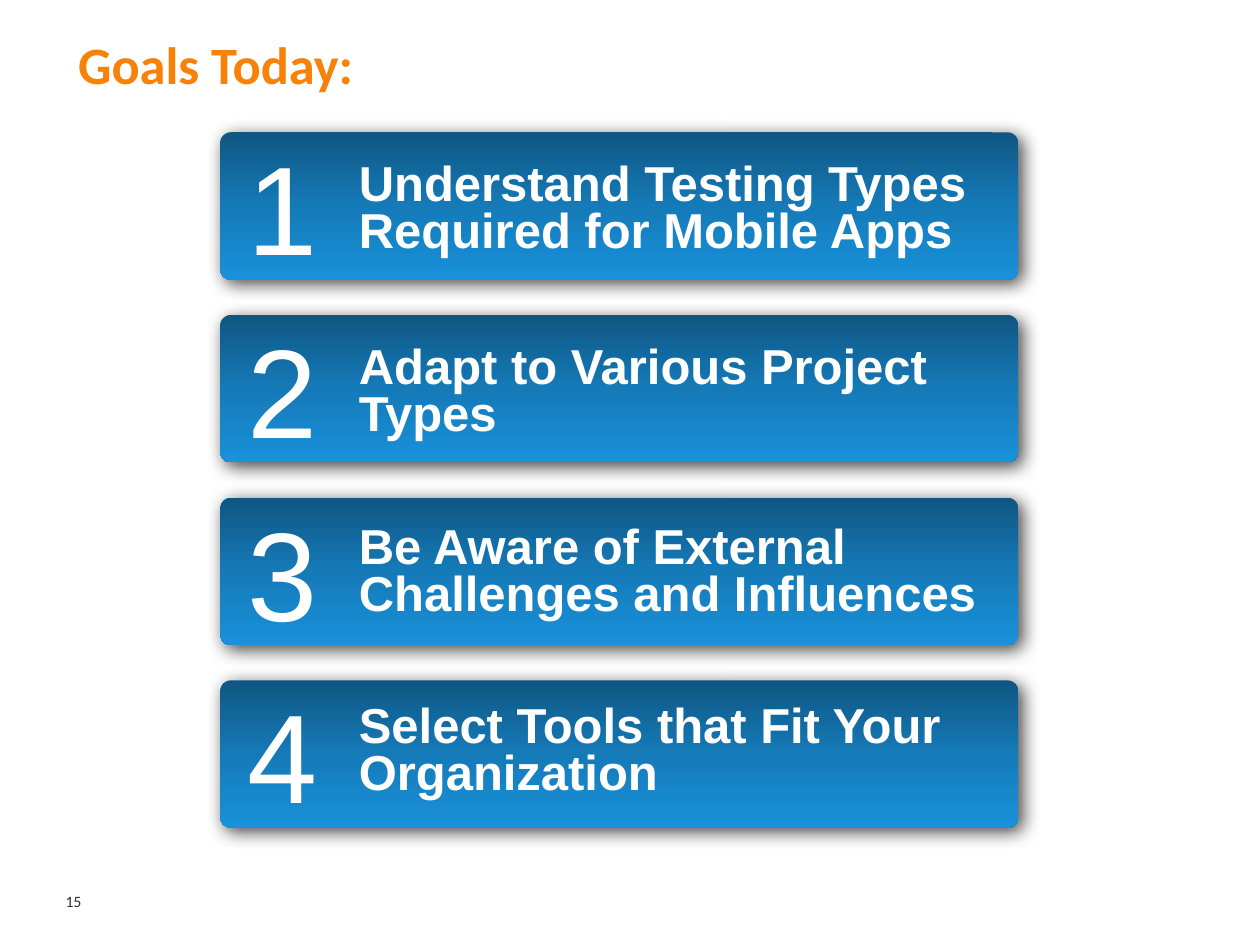
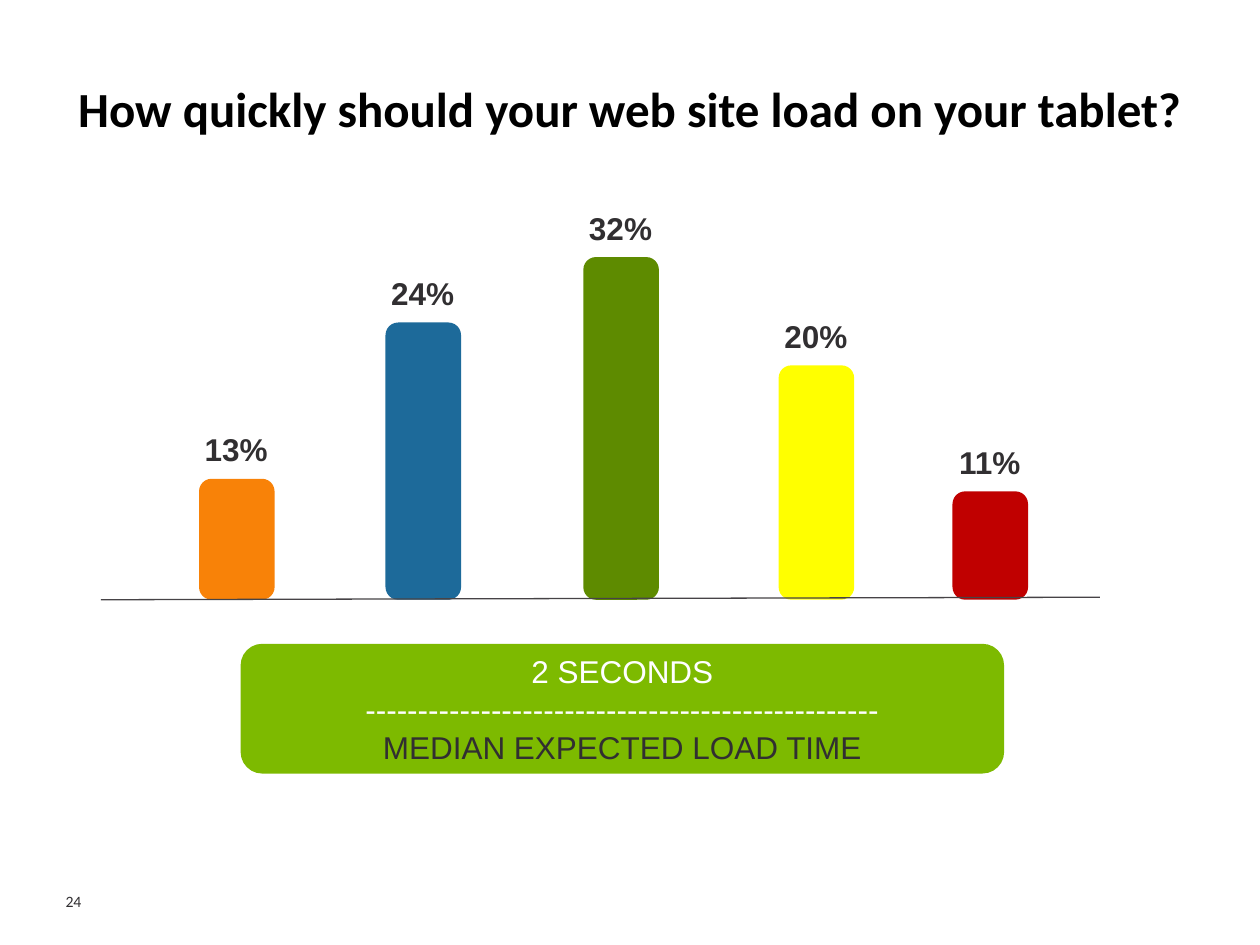
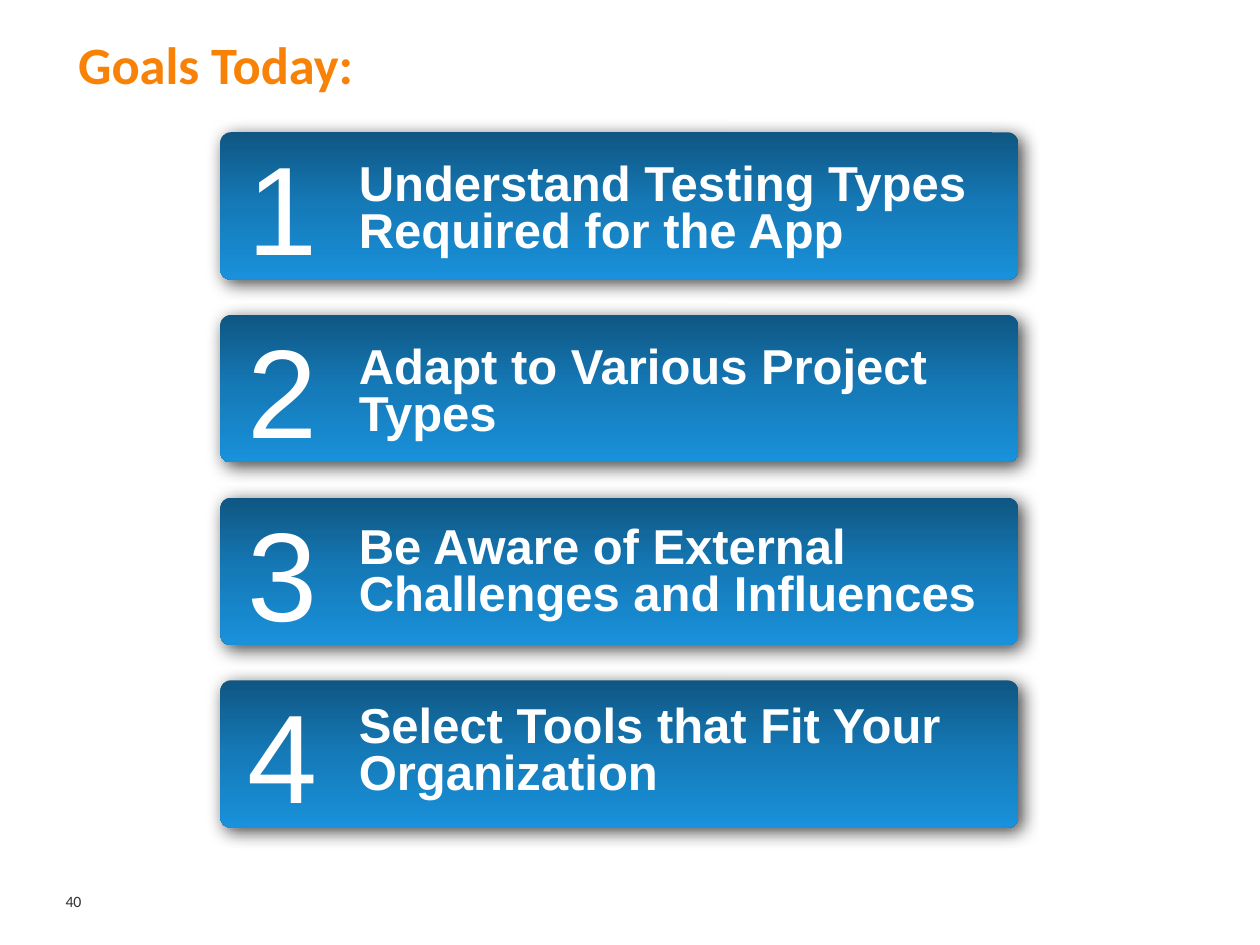
from lxml import etree
from pptx import Presentation
from pptx import util as u
from pptx.dml import color
from pptx.enum import shapes, text
from pptx.oxml import ns

ORANGE = "F88208"
WHITE = "FFFFFF"
BLACK = "000000"
DARK = "312F31"
GREEN = "7DBA00"
AXIS = "464346"
CARD_GRADIENT = [(0, "0F5682"), (50, "157AB8"), (100, "1991DB")]

TITLE_BOX = (0.52, 0.32, 9.02, 0.85)
NUMBER_BOX = (0.52, 6.95, 0.85, 0.4)
CARDS_BOX = (1.75, 1.05, 6.33, 1.17)
CARD_PITCH = 1.45
CHART_BOX = (0.8, 1.58, 7.93, 3.18)
CALLOUT_BOX = (1.91, 5.11, 6.06, 1.03)

SHARED_GOALS = [
    ("Adapt to Various Project Types", 0.2),
    ("Be Aware of External Challenges and Influences", 0.18),
    ("Select Tools that Fit Your Organization", 0.15),
]
BARS = [
    ("13%", ORANGE, 0.78, 0.96),
    ("24%", "1D6A9A", 2.26, 2.2),
    ("32%", "5E8B00", 3.83, 2.72),
    ("20%", "FFFF00", 5.38, 1.86),
    ("11%", "C00000", 6.76, 0.86),
]


def rgb(value):
    return color.RGBColor.from_string(value)


def lengths(box):
    return [u.Inches(value) for value in box]


def set_insets(frame, left, top, right, bottom):
    frame.margin_left, frame.margin_top, frame.margin_right, frame.margin_bottom = lengths(
        (left, top, right, bottom))


def add_run(paragraph, content, size, colour, font="Arial", bold=False):
    run = paragraph.add_run()
    run.text = content
    run.font.size = u.Pt(size)
    run.font.name = font
    run.font.bold = bold
    run.font.color.rgb = rgb(colour)


def add_block(slide, box, colour, kind=shapes.MSO_SHAPE.ROUNDED_RECTANGLE):
    shape = slide.shapes.add_shape(kind, *lengths(box))
    shape.fill.solid()
    shape.fill.fore_color.rgb = rgb(colour)
    shape.line.fill.background()
    shape.shadow.inherit = False
    return shape


def add_centred_lines(shape, lines, size, bold=False):
    frame = shape.text_frame
    frame.word_wrap = False
    frame.vertical_anchor = text.MSO_ANCHOR.MIDDLE
    for index, (content, colour) in enumerate(lines):
        paragraph = frame.add_paragraph() if index else frame.paragraphs[0]
        paragraph.alignment = text.PP_ALIGN.CENTER
        add_run(paragraph, content, size, colour, bold=bold)


def add_titled_slide(presentation, title, number, size, colour, top_inset=0.05):
    slide = presentation.slides.add_slide(presentation.slide_layouts[5])
    shape = slide.shapes.title
    shape.left, shape.top, shape.width, shape.height = lengths(TITLE_BOX)
    frame = shape.text_frame
    frame.auto_size = text.MSO_AUTO_SIZE.NONE
    frame.word_wrap = True
    frame.vertical_anchor = text.MSO_ANCHOR.TOP
    set_insets(frame, 0.1, top_inset, 0.1, 0)
    paragraph = frame.paragraphs[0]
    paragraph.alignment = text.PP_ALIGN.LEFT
    paragraph.line_spacing = 0.75
    add_run(paragraph, title, size, colour, "Calibri", True)

    frame = slide.shapes.add_textbox(*lengths(NUMBER_BOX)).text_frame
    frame.word_wrap = True
    frame.vertical_anchor = text.MSO_ANCHOR.MIDDLE
    set_insets(frame, 0, 0.05, 0, 0.05)
    add_run(frame.paragraphs[0], number, 9, DARK, "Calibri")
    return slide


def add_colour_element(parent, colour):
    return etree.SubElement(parent, ns.qn("a:srgbClr"), val=colour)


def style_card(shape):
    shape.adjustments[0] = 0.071
    shape.fill.gradient()
    shape.fill.gradient_angle = 270
    properties = shape._element.spPr
    stops = properties.find(".//" + ns.qn("a:gsLst"))
    for stop in list(stops):
        stops.remove(stop)
    for position, colour in CARD_GRADIENT:
        stop = etree.SubElement(stops, ns.qn("a:gs"), pos=str(position * 1000))
        add_colour_element(stop, colour)
    shadow = etree.SubElement(
        properties.find(ns.qn("a:effectLst")), ns.qn("a:outerShdw"),
        blurRad=str(u.Pt(10)), dist=str(u.Pt(3)), dir="2700000", algn="ctr", rotWithShape="0")
    etree.SubElement(add_colour_element(shadow, BLACK), ns.qn("a:alpha"), val="70000")


def add_card_text(slide, box, content, size, margin, wrap):
    frame = slide.shapes.add_textbox(*lengths(box)).text_frame
    frame.word_wrap = wrap
    frame.auto_size = text.MSO_AUTO_SIZE.SHAPE_TO_FIT_TEXT
    paragraph = frame.paragraphs[0]
    paragraph.space_after = u.Pt(6)
    properties = paragraph._p.get_or_add_pPr()
    properties.set("marL", str(u.Inches(margin)))
    properties.set("indent", str(u.Inches(-0.25)))
    add_run(paragraph, content, size, WHITE, bold=wrap)
    return paragraph


def add_goal_card(slide, box, number, goal, label_offset):
    left, top, width, height = box
    style_card(add_block(slide, box, CARD_GRADIENT[0][1]))
    label_box = (left + 1, top + label_offset, 5.67, 0.85)
    label = add_card_text(slide, label_box, goal, 28, 0, True)
    label.line_spacing = 0.8
    number_box = (left + 0.12, top - 0.07, 0.74, 1.31)
    add_card_text(slide, number_box, str(number), 72, 0.25, False)


def add_goals_slide(presentation, number, first_goal):
    slide = add_titled_slide(presentation, "Goals Today:", number, 30, ORANGE)
    left, top, width, height = CARDS_BOX
    for index, (goal, offset) in enumerate([(first_goal, 0.2)] + SHARED_GOALS):
        card_box = (left, top + index * CARD_PITCH, width, height)
        add_goal_card(slide, card_box, index + 1, goal, offset)


def add_load_time_bars(slide, box):
    left, top, width, height = box
    bottom = top + height
    for label, colour, offset, bar_height in BARS:
        add_block(slide, (left + offset, bottom - bar_height, 0.6, bar_height), colour)
    axis = slide.shapes.add_connector(
        shapes.MSO_CONNECTOR.STRAIGHT, *lengths((left, bottom, left + width, bottom - 0.02)))
    axis.line.color.rgb = rgb(AXIS)
    axis.line.width = u.Pt(0.75)
    etree.SubElement(axis._element.spPr, ns.qn("a:effectLst"))
    for label, colour, offset, bar_height in BARS:
        label_box = (left + offset - 0.07, bottom - bar_height - 0.46, 0.73, 0.45)
        shape = add_block(slide, label_box, WHITE, shapes.MSO_SHAPE.RECTANGLE)
        add_centred_lines(shape, [(label, DARK)], 18, True)


def add_load_time_slide(presentation):
    slide = add_titled_slide(
        presentation, "How quickly should your web site load on your tablet?",
        "24", 28, BLACK, 0.41)
    add_load_time_bars(slide, CHART_BOX)
    callout = add_block(slide, CALLOUT_BOX, GREEN)
    add_centred_lines(callout, [
        ("2 SECONDS", WHITE),
        ("-" * 49, WHITE),
        ("MEDIAN EXPECTED LOAD TIME", DARK),
    ], 18)


def main():
    presentation = Presentation()
    presentation.slide_width = u.Inches(10)
    presentation.slide_height = u.Inches(7.5)
    add_goals_slide(presentation, "15", "Understand Testing Types Required for Mobile Apps")
    add_load_time_slide(presentation)
    add_goals_slide(presentation, "40", "Understand Testing Types Required for the App")
    presentation.save("out.pptx")


if __name__ == "__main__":
    main()
